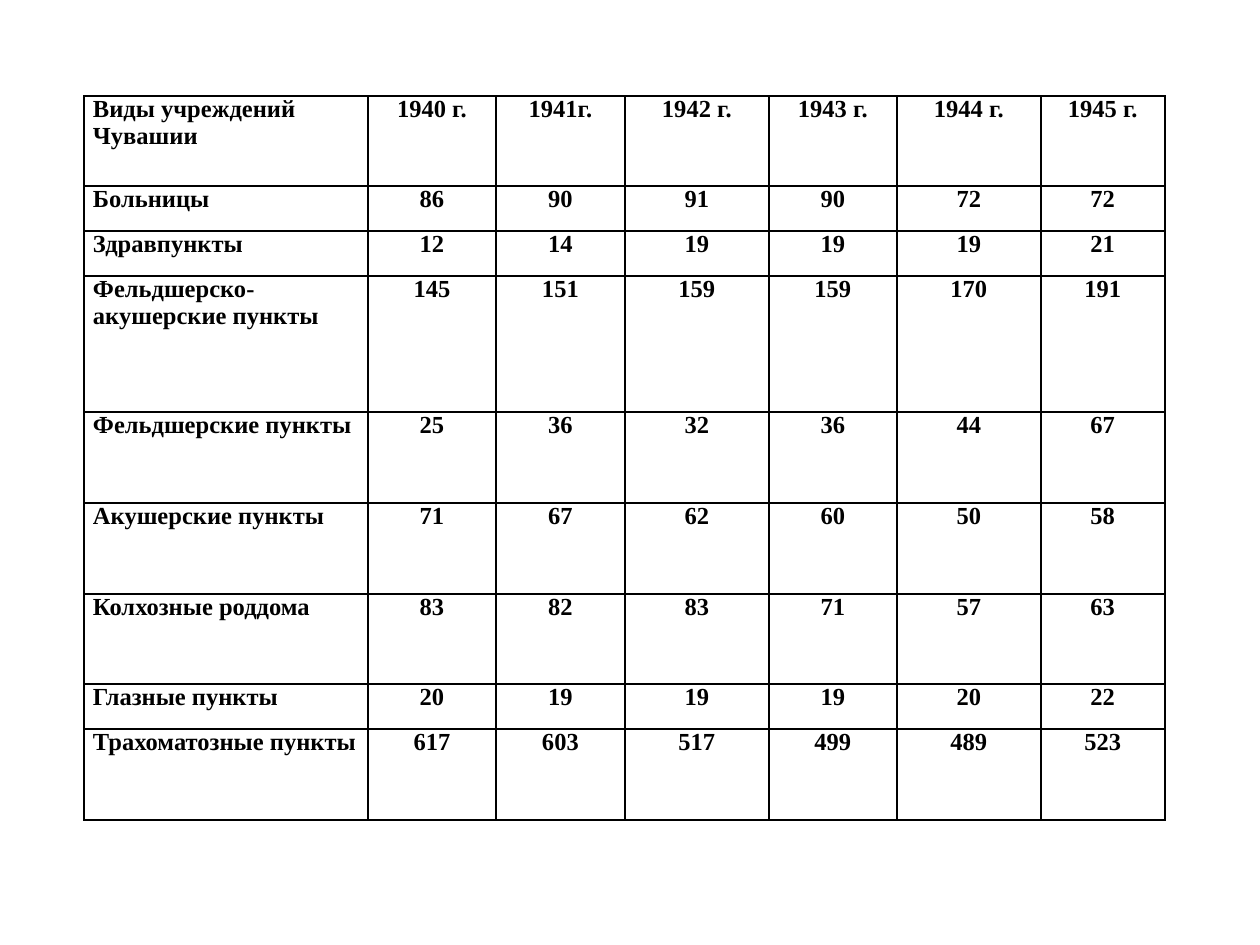
"""Build a slide with a table of medical institutions in Chuvashia, 1940-1945."""
from lxml.etree import SubElement
from pptx import Presentation
from pptx.dml.color import RGBColor
from pptx.enum.text import PP_ALIGN
from pptx.oxml.ns import qn
from pptx.util import Pt

PX = 914400 // 126
BLACK = RGBColor(0x00, 0x00, 0x00)
FONT = "Times New Roman"
COLUMN_WIDTHS = [284, 128, 129, 144, 128, 144, 124]
ROW_HEIGHTS = [90, 45, 45, 136, 91, 91, 90, 45, 91]
ROWS = [
    ["Виды учреждений\nЧувашии", "1940 г.", "1941г.", "1942 г.", "1943 г.", "1944 г.", "1945 г."],
    ["Больницы", 86, 90, 91, 90, 72, 72],
    ["Здравпункты", 12, 14, 19, 19, 19, 21],
    ["Фельдшерско-акушерские пункты", 145, 151, 159, 159, 170, 191],
    ["Фельдшерские пункты", 25, 36, 32, 36, 44, 67],
    ["Акушерские пункты", 71, 67, 62, 60, 50, 58],
    ["Колхозные роддома", 83, 82, 83, 71, 57, 63],
    ["Глазные пункты", 20, 19, 19, 19, 20, 22],
    ["Трахоматозные пункты", 617, 603, 517, 499, 489, 523],
]


def add_borders(cell):
    properties = cell._tc.get_or_add_tcPr()
    for side in ("a:lnL", "a:lnR", "a:lnT", "a:lnB"):
        line = SubElement(properties, qn(side), w=str(Pt(1)))
        fill = SubElement(line, qn("a:solidFill"))
        SubElement(fill, qn("a:srgbClr"), val=str(BLACK))


deck = Presentation()
deck.slide_width = 1260 * PX
deck.slide_height = 945 * PX
page = deck.slides.add_slide(deck.slide_layouts[6])

frame = page.shapes.add_table(
    len(ROWS), len(COLUMN_WIDTHS), 84 * PX, 96 * PX,
    sum(COLUMN_WIDTHS) * PX, sum(ROW_HEIGHTS) * PX)
table = frame.table
table.first_row = False
table.horz_banding = False
for column, width in zip(table.columns, COLUMN_WIDTHS):
    column.width = width * PX
for row, height in zip(table.rows, ROW_HEIGHTS):
    row.height = height * PX

for row, values in zip(table.rows, ROWS):
    for index, (cell, value) in enumerate(zip(row.cells, values)):
        add_borders(cell)
        cell.fill.background()
        cell.margin_left = cell.margin_right = 9 * PX
        cell.margin_top = cell.margin_bottom = 0
        for number, text in enumerate(str(value).split("\n")):
            text_frame = cell.text_frame
            para = text_frame.add_paragraph() if number else text_frame.paragraphs[0]
            para.alignment = PP_ALIGN.CENTER if index else PP_ALIGN.JUSTIFY
            span = para.add_run()
            span.text = text
            span.font.name = FONT
            span.font.size = Pt(14)
            span.font.bold = True
            span.font.color.rgb = BLACK

deck.save("out.pptx")
